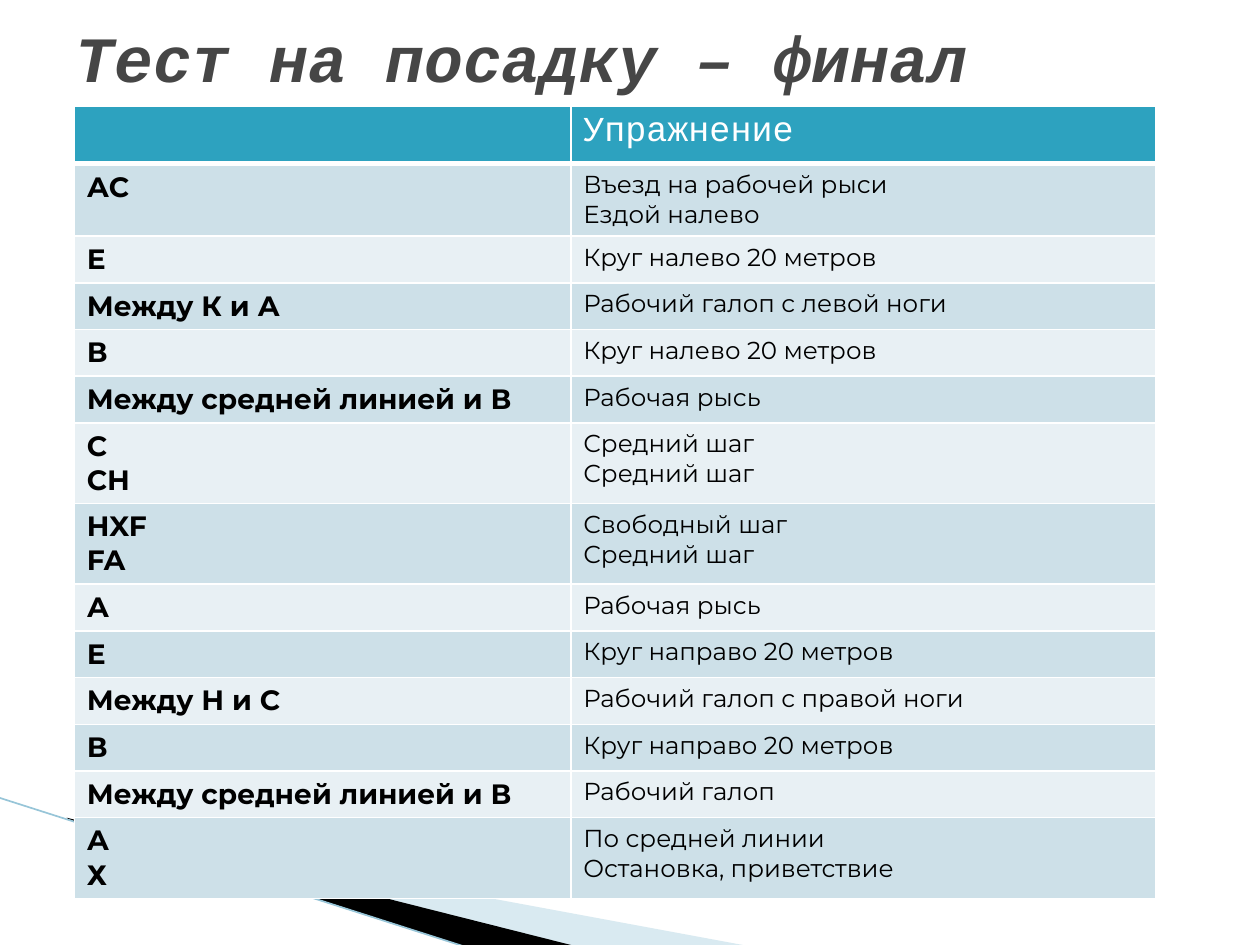
from typing import NamedTuple

from lxml.etree import SubElement
from pptx import Presentation
from pptx.dml.color import RGBColor
from pptx.enum.shapes import MSO_CONNECTOR
from pptx.enum.text import MSO_ANCHOR, MSO_AUTO_SIZE, PP_ALIGN
from pptx.oxml import parse_xml
from pptx.oxml.ns import nsdecls, qn
from pptx.util import Inches, Pt

WHITE = RGBColor(0xFF, 0xFF, 0xFF)
BLACK = RGBColor(0, 0, 0)
TITLE_GREY = RGBColor(0x46, 0x46, 0x46)
HEADER_TEAL = RGBColor(0x2D, 0xA2, 0xBF)
BANDS = (RGBColor(0xCD, 0xE0, 0xE8), RGBColor(0xE8, 0xF0, 0xF4))
PALE_BLUE = RGBColor(0xA0, 0xCB, 0xDC)
LINE_BLUE = RGBColor(0x97, 0xC5, 0xD8)

MONO = "Courier New"
SANS = "Montserrat"
COLUMNS = (3.94, 4.64)
HEADER_HEIGHT = 0.46
THIN, THICK = 1, 3


class Exercise(NamedTuple):
    place: str
    task: str
    height: float = 0.37


class Wedge(NamedTuple):
    points: tuple
    color: RGBColor
    alpha: int = 100


EXERCISES = (
    Exercise("АС", "Въезд на рабочей рыси\nЕздой налево", 0.56),
    Exercise("Е", "Круг налево 20 метров"),
    Exercise("Между К и А", "Рабочий галоп с левой ноги"),
    Exercise("В", "Круг налево 20 метров"),
    Exercise("Между средней линией и В", "Рабочая рысь"),
    Exercise("С\nСН", "Средний шаг\nСредний шаг", 0.64),
    Exercise("HXF\nFA", "Свободный шаг\nСредний шаг", 0.64),
    Exercise("А", "Рабочая рысь"),
    Exercise("Е", "Круг направо 20 метров"),
    Exercise("Между Н и С", "Рабочий галоп с правой ноги"),
    Exercise("В", "Круг направо 20 метров"),
    Exercise("Между средней линией и В", "Рабочий галоп"),
    Exercise("А\nХ", "По средней линии\nОстановка, приветствие", 0.64),
)

WEDGES = (
    Wedge(((0.55, 6.51), (5.95, 7.51), (4.56, 7.51), (0.55, 6.5)), PALE_BLUE, 40),
    Wedge(((0.53, 6.49), (4.57, 7.51), (3.72, 7.52), (0.54, 6.5)), BLACK),
)


def draw_wedge(s, wedge: Wedge) -> None:
    start, *rest = [(Inches(x), Inches(y)) for x, y in wedge.points]
    builder = s.shapes.build_freeform(*start)
    builder.add_line_segments(rest, close=True)
    sp = builder.convert_to_shape()
    sp.shadow.inherit = False
    sp.line.fill.background()
    sp.fill.solid()
    sp.fill.fore_color.rgb = wedge.color
    if wedge.alpha < 100:
        color = sp.fill._xPr.find(qn("a:solidFill"))[0]
        SubElement(color, qn("a:alpha"), val=str(wedge.alpha * 1000))


def draw_edge_line(s) -> None:
    line = s.shapes.add_connector(
        MSO_CONNECTOR.STRAIGHT, Inches(-0.01), Inches(6.33), Inches(3.71), Inches(7.52))
    line.line.color.rgb = LINE_BLUE
    line.line.width = Pt(0.95)
    SubElement(line._element.spPr, qn("a:effectLst"))


def set_borders(cell, top: int, bottom: int) -> None:
    tcPr = cell._tc.get_or_add_tcPr()
    widths = {"lnL": THIN, "lnR": THIN, "lnT": top, "lnB": bottom}
    for i, (side, width) in enumerate(widths.items()):
        tcPr.insert(i, parse_xml(
            f'<a:{side} {nsdecls("a")} w="{Pt(width)}"><a:solidFill>'
            f'<a:srgbClr val="{WHITE}"/></a:solidFill></a:{side}>'))


def fill_cell(cell, text: str, fill: RGBColor, font: str, size: int,
              color: RGBColor, bold: bool = False) -> None:
    cell.fill.solid()
    cell.fill.fore_color.rgb = fill
    cell.text = text
    for p in cell.text_frame.paragraphs:
        p.font.name = font
        p.font.size = Pt(size)
        p.font.bold = bold
        p.font.color.rgb = color


def draw_table(s) -> None:
    heights = [HEADER_HEIGHT] + [e.height for e in EXERCISES]
    table = s.shapes.add_table(
        len(heights), len(COLUMNS), Inches(0.59), Inches(0.84),
        Inches(sum(COLUMNS)), Inches(sum(heights))).table
    for column, width in zip(table.columns, COLUMNS):
        column.width = Inches(width)
    for row, height in zip(table.rows, heights):
        row.height = Inches(height)

    for cell, text in zip(table.rows[0].cells, ("", "Упражнение")):
        fill_cell(cell, text, HEADER_TEAL, MONO, 20, WHITE)
        set_borders(cell, THIN, THICK)
    for i, exercise in enumerate(EXERCISES):
        place, task = table.rows[i + 1].cells
        band = BANDS[i % 2]
        fill_cell(place, exercise.place, band, SANS, 16, BLACK, bold=True)
        fill_cell(task, exercise.task, band, SANS, 14, BLACK)
        for cell in (place, task):
            set_borders(cell, THIN if i else THICK, THIN)


def set_title(s) -> None:
    title = s.shapes.title
    title.left, title.top = Inches(0.5), Inches(0.3)
    title.width, title.height = Inches(9), Inches(0.3)
    tf = title.text_frame
    tf.text = "Тест на посадку – финал"
    tf.auto_size = MSO_AUTO_SIZE.NONE
    tf.vertical_anchor = MSO_ANCHOR.MIDDLE
    p = tf.paragraphs[0]
    p.alignment = PP_ALIGN.LEFT
    p.font.name = MONO
    p.font.size = Pt(36.9)
    p.font.bold = p.font.italic = True
    p.font.color.rgb = TITLE_GREY


def main() -> None:
    prs = Presentation()
    prs.slide_width, prs.slide_height = Inches(10), Inches(7.5)
    s = prs.slides.add_slide(prs.slide_layouts[5])
    set_title(s)
    for wedge in WEDGES:
        draw_wedge(s, wedge)
    draw_edge_line(s)
    draw_table(s)
    prs.save("out.pptx")


if __name__ == "__main__":
    main()
